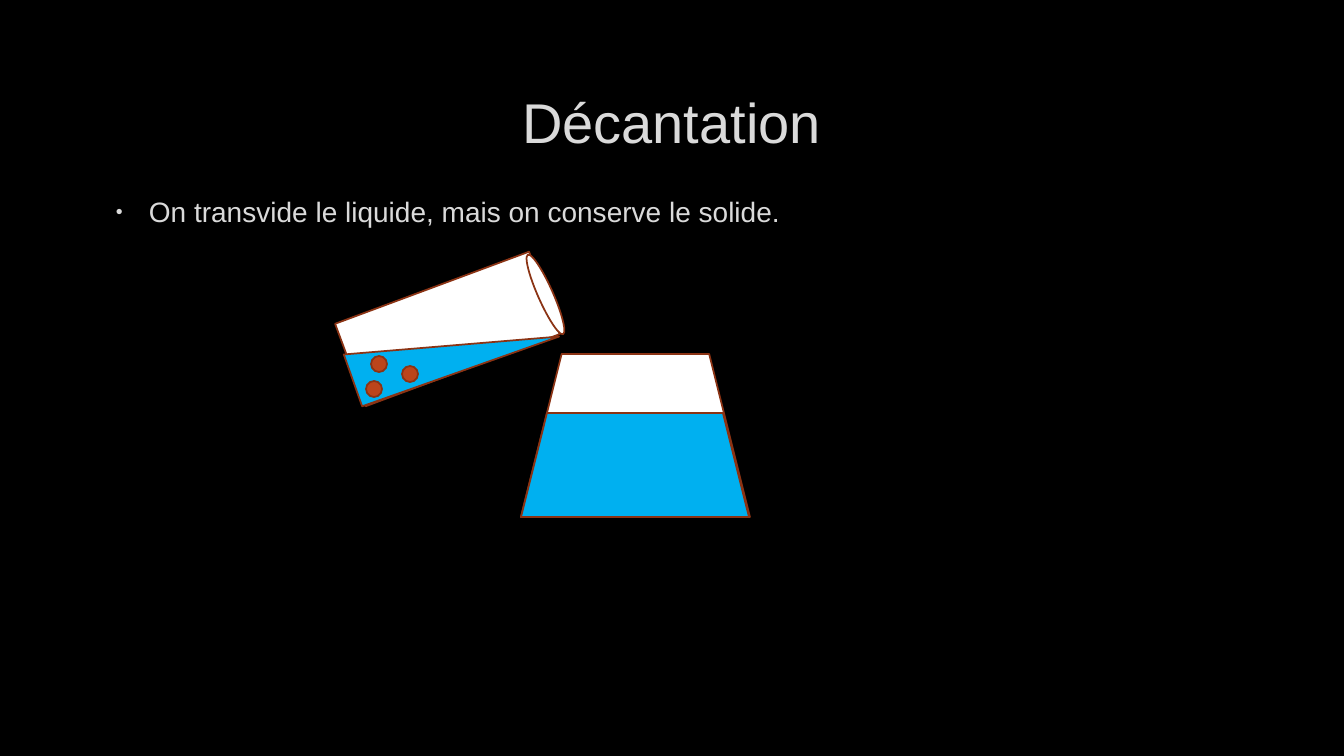
import pptx
import pptx.util
import pptx.dml.color
import pptx.enum.shapes
import pptx.enum.text
import pptx.oxml
import pptx.oxml.ns

TITLE = "Décantation"
BODY = "On transvide le liquide, mais on conserve le solide."
TITLE_BOX = (101, 68, 1141, 107)
BODY_BOX = (101, 190, 1141, 448)
COLORS = {
    "background": "000000",
    "text": "DADADA",
    "glass": "FFFFFF",
    "liquid": "00B0F0",
    "solid": "BC451B",
    "outline": "8B3314",
}
GRAIN_SIZE = 16
GRAINS = [(371, 356), (402, 366), (366, 381)]
TUBE = [
    ("RECTANGLE", (344, 285, 207, 88), 339.6, "glass"),
    ("RIGHT_TRIANGLE", (347, 318, 209, 55), 340.5, "liquid"),
]
MOUTH = ("OVAL", (538, 251, 15, 87), 336.1, "glass")
FLASK = [
    ("TRAPEZOID", (521, 354, 229, 163), 0, "glass"),
    ("TRAPEZOID", (521, 413, 228, 104), 0, "liquid"),
]

EMU_PER_PX = 914400 / 100.8


def px(length):
    return pptx.util.Emu(round(length * EMU_PER_PX))


def color(name):
    return pptx.dml.color.RGBColor.from_string(COLORS[name])


def add_text(slide, box, text, size, anchor):
    shape = slide.shapes.add_textbox(*map(px, box))
    frame = shape.text_frame
    frame.word_wrap = True
    frame.vertical_anchor = anchor
    paragraph = frame.paragraphs[0]
    run = paragraph.add_run()
    run.text = text
    run.font.name = "Arial"
    run.font.size = pptx.util.Pt(size)
    run.font.color.rgb = color("text")
    return paragraph


def add_bullet(paragraph, left, hanging):
    properties = paragraph._p.get_or_add_pPr()
    properties.set("marL", str(px(left)))
    properties.set("indent", str(-px(hanging)))
    namespace = pptx.oxml.ns.nsdecls("a")
    for markup in (
        f'<a:buClr {namespace}><a:srgbClr val="{COLORS["text"]}"/></a:buClr>',
        f'<a:buSzPct {namespace} val="70000"/>',
        f'<a:buFont {namespace} typeface="Arial"/>',
        f'<a:buChar {namespace} char="•"/>',
    ):
        properties.append(pptx.oxml.parse_xml(markup))


def add_part(slide, kind, box, rotation, fill):
    preset = pptx.enum.shapes.MSO_SHAPE[kind]
    shape = slide.shapes.add_shape(preset, *map(px, box))
    shape.rotation = rotation
    shape.shadow.inherit = False
    shape.fill.solid()
    shape.fill.fore_color.rgb = color(fill)
    shape.line.color.rgb = color("outline")
    shape.line.width = pptx.util.Pt(1.25)


def main():
    presentation = pptx.Presentation()
    presentation.slide_width = px(1344)
    presentation.slide_height = px(756)
    slide = presentation.slides.add_slide(presentation.slide_layouts[6])
    slide.background.fill.solid()
    slide.background.fill.fore_color.rgb = color("background")

    anchors = pptx.enum.text.MSO_ANCHOR
    title = add_text(slide, TITLE_BOX, TITLE, 40, anchors.MIDDLE)
    title.alignment = pptx.enum.text.PP_ALIGN.CENTER
    body = add_text(slide, BODY_BOX, BODY, 20, anchors.TOP)
    add_bullet(body, 38, 33)

    grains = [("OVAL", (x, y, GRAIN_SIZE, GRAIN_SIZE), 0, "solid") for x, y in GRAINS]
    for part in TUBE + grains + [MOUTH] + FLASK:
        add_part(slide, *part)

    presentation.save("out.pptx")


if __name__ == "__main__":
    main()
